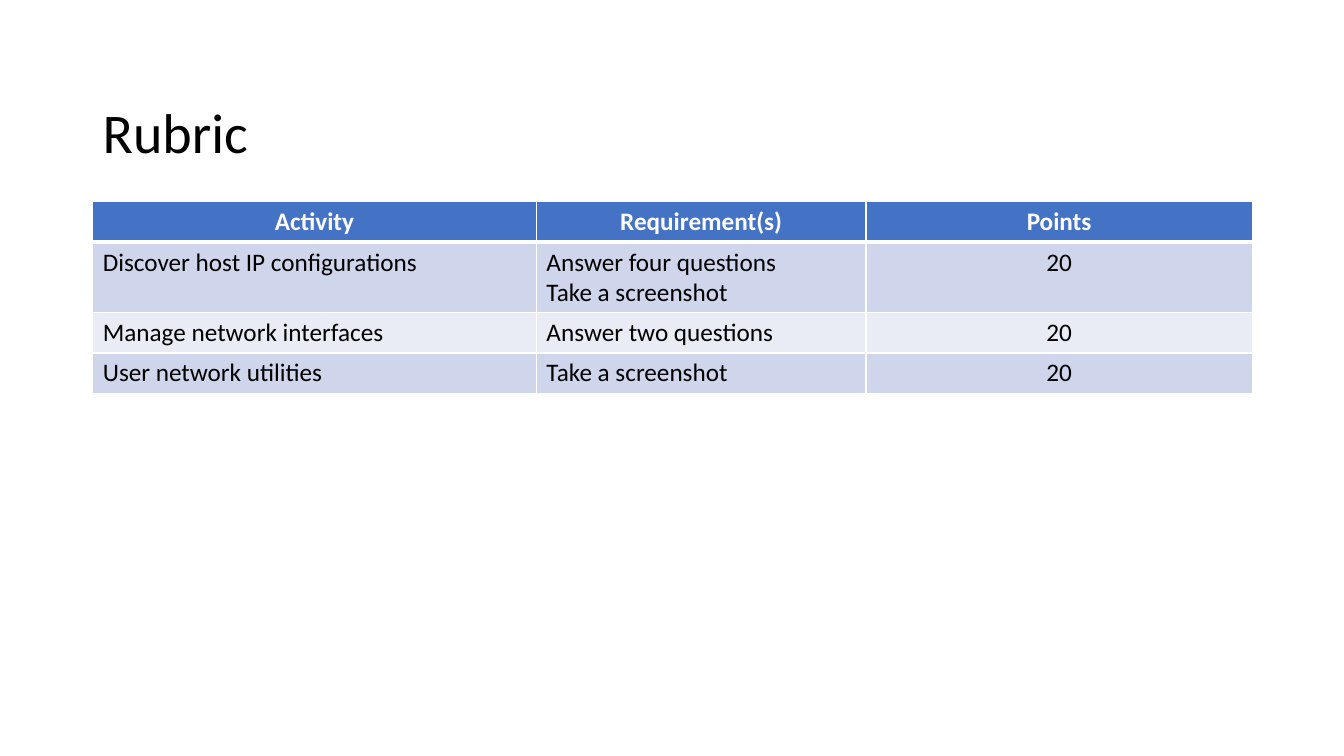
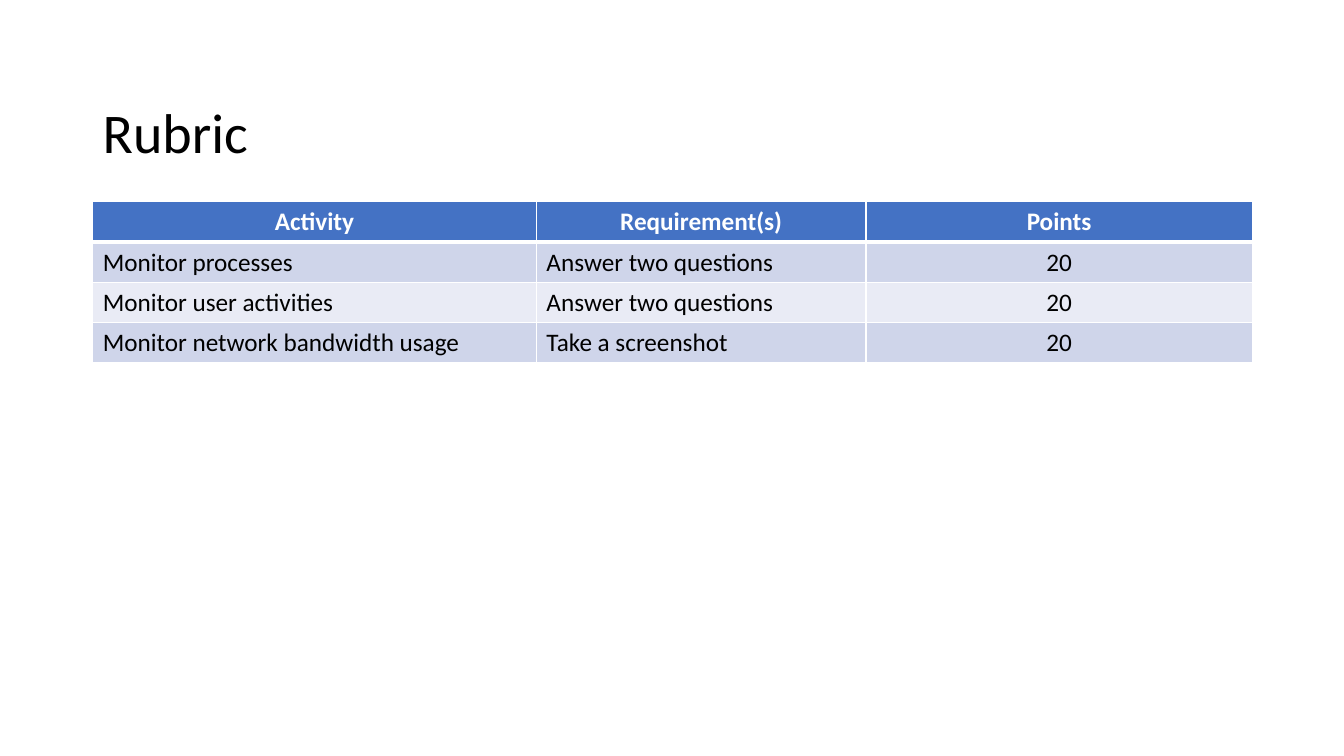
from pptx import Presentation, util as u
from pptx.dml.color import RGBColor
from pptx.enum import text
from pptx.oxml import parse_xml
from pptx.oxml.ns import nsdecls

WHITE = RGBColor(0xFF, 0xFF, 0xFF)
BLACK = RGBColor(0x00, 0x00, 0x00)
BLUE = RGBColor(0x44, 0x72, 0xC4)
BANDS = [RGBColor(0xE9, 0xEB, 0xF5), RGBColor(0xCF, 0xD5, 0xEA)]
FONT = "Calibri"
WIDE, HIGH = 13.33, 7.5
LEFT, SPAN = 0.92, 11.5
COLS = [4.4, 3.27, 3.83]
LINE, PAD = 0.3, 0.1
HEAD = ("Activity", "Requirement(s)", "Points")
RUBRICS = [
    [
        ("Discover host IP configurations", "Answer four questions\nTake a screenshot", "20"),
        ("Manage network interfaces", "Answer two questions", "20"),
        ("User network utilities", "Take a screenshot", "20"),
    ],
    [
        ("Monitor processes", "Answer two questions", "20"),
        ("Monitor user activities", "Answer two questions", "20"),
        ("Monitor network bandwidth usage", "Take a screenshot", "20"),
    ],
]


def write(para, words, size, color, bold=False):
    run = para.add_run()
    run.text = words
    run.font.name = FONT
    run.font.size = u.Pt(size)
    run.font.bold = bold
    run.font.color.rgb = color


def border(cell, row):
    props = cell._tc.get_or_add_tcPr()
    widths = {"L": 1, "R": 1, "T": 3 if row == 1 else 1, "B": 3 if row == 0 else 1}
    for spot, (side, width) in enumerate(widths.items()):
        props.insert(spot, parse_xml(
            f'<a:ln{side} {nsdecls("a")} w="{u.Pt(width)}"><a:solidFill>'
            f'<a:srgbClr val="{WHITE}"/></a:solidFill></a:ln{side}>'))


deck = Presentation()
deck.slide_width, deck.slide_height = u.Inches(WIDE), u.Inches(HIGH)

for items in RUBRICS:
    slide = deck.slides.add_slide(deck.slide_layouts[6])
    title = slide.shapes.add_textbox(
        u.Inches(LEFT), u.Inches(0.83), u.Inches(SPAN), u.Inches(1.02)).text_frame
    title.word_wrap = True
    title.vertical_anchor = text.MSO_ANCHOR.MIDDLE
    title.paragraphs[0].line_spacing = 0.9
    write(title.paragraphs[0], "Rubric", 40, BLACK)

    rows = [HEAD] + items
    tall = [PAD + LINE * max(len(words.split("\n")) for words in row) for row in rows]
    grid = slide.shapes.add_table(
        len(rows), len(COLS), u.Inches(LEFT), u.Inches(2),
        u.Inches(SPAN), u.Inches(sum(tall))).table
    for col, width in zip(grid.columns, COLS):
        col.width = u.Inches(width)

    for r, row in enumerate(rows):
        grid.rows[r].height = u.Inches(tall[r])
        top = r == 0
        for c, words in enumerate(row):
            cell = grid.cell(r, c)
            cell.fill.solid()
            cell.fill.fore_color.rgb = BLUE if top else BANDS[r % 2]
            border(cell, r)
            for n, line in enumerate(words.split("\n")):
                frame = cell.text_frame
                para = frame.add_paragraph() if n else frame.paragraphs[0]
                if top or c == len(COLS) - 1:
                    para.alignment = text.PP_ALIGN.CENTER
                write(para, line, 18, WHITE if top else BLACK, top)

deck.save("out.pptx")
